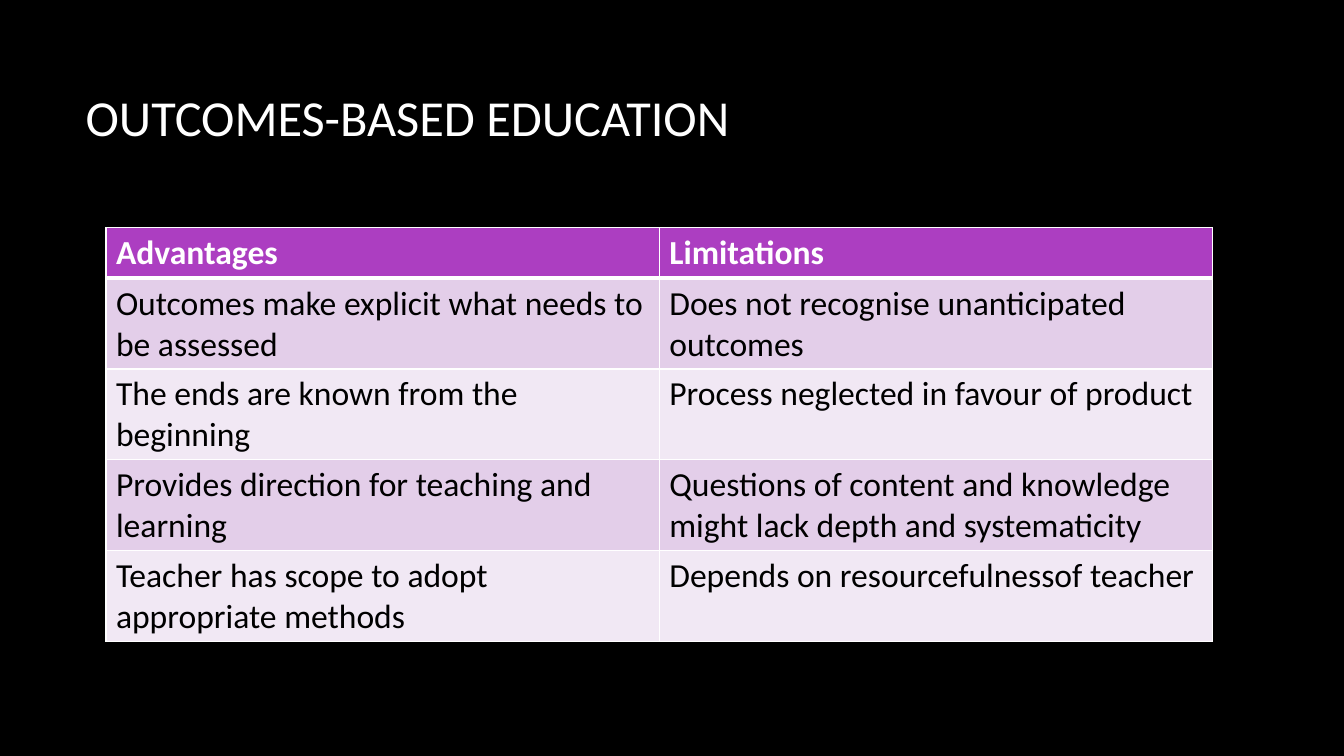
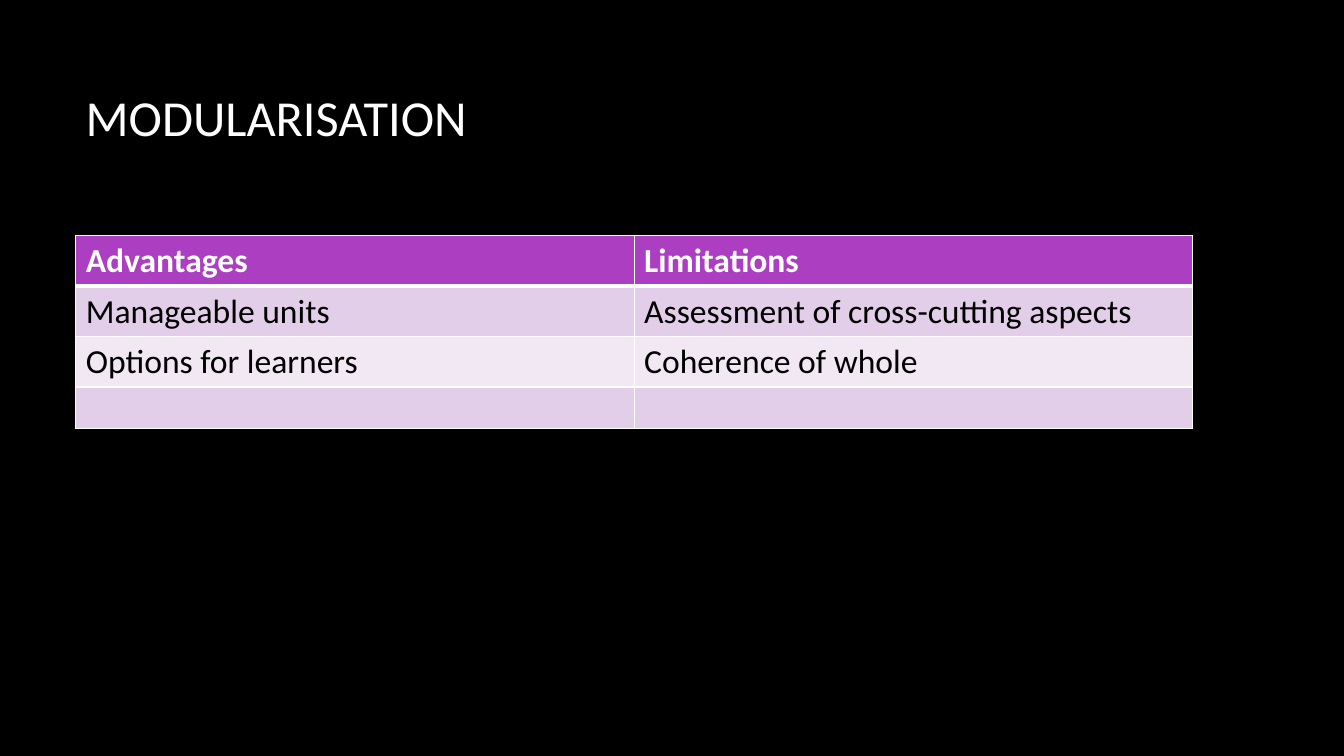
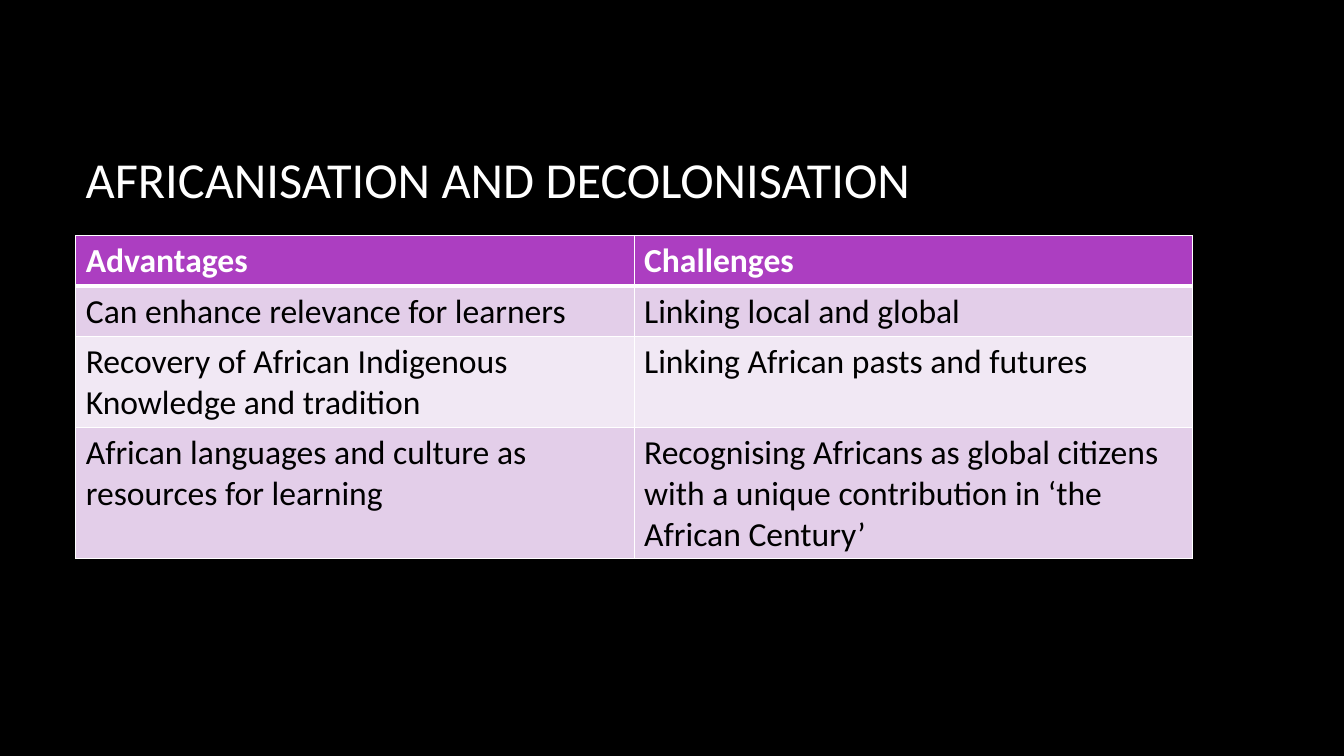
from lxml import etree
from pptx import Presentation
from pptx.dml.color import RGBColor
from pptx.enum.text import MSO_ANCHOR
from pptx.oxml.ns import qn
from pptx.util import Cm, Pt

MIDDLE = MSO_ANCHOR.MIDDLE

# Content: title, whether it sits low in its box, table place, rows
SLIDES = [
    {
        "title": "OUTCOMES-BASED EDUCATION",
        "low": False,
        "table": (2.67, 5.74, 27.89),
        "rows": [
            ("Advantages", "Limitations"),
            ("Outcomes make explicit what needs to be assessed",
             "Does not recognise unanticipated outcomes"),
            ("The ends are known from the beginning",
             "Process neglected in favour of product"),
            ("Provides direction for teaching and learning",
             "Questions of content and knowledge might lack depth and systematicity"),
            ("Teacher has scope to adopt appropriate methods",
             "Depends on resourcefulnessof teacher"),
        ],
    },
    {
        "title": "MODULARISATION",
        "low": False,
        "table": (1.91, 5.94, 28.14),
        "rows": [
            ("Advantages", "Limitations"),
            ("Manageable units", "Assessment of cross-cutting aspects"),
            ("Options for learners", "Coherence of whole"),
            ("", ""),
        ],
    },
    {
        "title": "AFRICANISATION AND DECOLONISATION",
        "low": True,
        "table": (1.91, 5.94, 28.14),
        "rows": [
            ("Advantages", "Challenges"),
            ("Can enhance relevance for learners", "Linking local and global"),
            ("Recovery of African Indigenous Knowledge and tradition",
             "Linking African pasts and futures"),
            ("African languages and culture as resources for learning",
             "Recognising Africans as global citizens with a unique contribution "
             "in ‘the African Century’"),
        ],
    },
]

# Shared look
COLORS = {
    "background": "000000",
    "light": "FFFFFF",
    "dark": "000000",
    "header": "AC3EC1",
    "odd": "E3CEE9",
    "even": "F1E8F4",
}
FORMATS = {
    "title": {"name": "Calibri", "size": Pt(36), "bold": False, "color": "light"},
    "header": {"name": "Calibri", "size": Pt(24), "bold": True, "color": "light"},
    "body": {"name": "Calibri", "size": Pt(24), "bold": False, "color": "dark"},
}
TITLE_BOX = (1.91, 1.7, 28.14, 4.04)
TITLE_LINE = 1.55
INSET = 0.13
ROW_HEIGHT = 1.04
THIN, THICK = 1, 3


def rgb(name):
    return RGBColor.from_string(COLORS[name])


def write(text_frame, text, style):
    paragraph = text_frame.paragraphs[0]
    run = paragraph.add_run()
    run.text = text
    for key, value in FORMATS[style].items():
        if key == "color":
            run.font.color.rgb = rgb(value)
        else:
            setattr(run.font, key, value)


def add_title(slide, text, low):
    box = slide.shapes.add_textbox(*map(Cm, TITLE_BOX))
    frame = box.text_frame
    frame.word_wrap = True
    frame.vertical_anchor = MIDDLE
    # One line of the box stays free, above or below the title
    frame.margin_top = Cm(INSET + TITLE_LINE * low)
    frame.margin_bottom = Cm(INSET + TITLE_LINE * (not low))
    write(frame, text, "title")


def add_borders(cell, widths):
    properties = cell._tc.get_or_add_tcPr()
    for side, width in widths.items():
        line = etree.SubElement(properties, qn(f"a:ln{side}"), w=str(Pt(width)))
        fill = etree.SubElement(line, qn("a:solidFill"))
        etree.SubElement(fill, qn("a:srgbClr"), val=COLORS["light"])


def add_comparison(slide, place, rows):
    left, top, width = place
    columns = len(rows[0])
    frame = slide.shapes.add_table(len(rows), columns, Cm(left), Cm(top),
                                   Cm(width), Cm(ROW_HEIGHT * len(rows)))
    table = frame.table
    for column in table.columns:
        column.width = Cm(width / columns)
    for row_index, texts in enumerate(rows):
        table.rows[row_index].height = Cm(ROW_HEIGHT)
        is_header = row_index == 0
        band = "header" if is_header else "odd" if row_index % 2 else "even"
        for column_index, text in enumerate(texts):
            cell = table.cell(row_index, column_index)
            add_borders(cell, {"L": THIN, "R": THIN,
                               "T": THICK if row_index == 1 else THIN,
                               "B": THICK if is_header else THIN})
            cell.fill.solid()
            cell.fill.fore_color.rgb = rgb(band)
            if text:
                write(cell.text_frame, text, "header" if is_header else "body")


def main():
    presentation = Presentation()
    presentation.slide_width, presentation.slide_height = Cm(33.87), Cm(19.05)
    background = presentation.slide_master.background.fill
    background.solid()
    background.fore_color.rgb = rgb("background")
    blank = presentation.slide_layouts[6]
    for content in SLIDES:
        slide = presentation.slides.add_slide(blank)
        add_title(slide, content["title"], content["low"])
        add_comparison(slide, content["table"], content["rows"])
    presentation.save("out.pptx")


if __name__ == "__main__":
    main()
